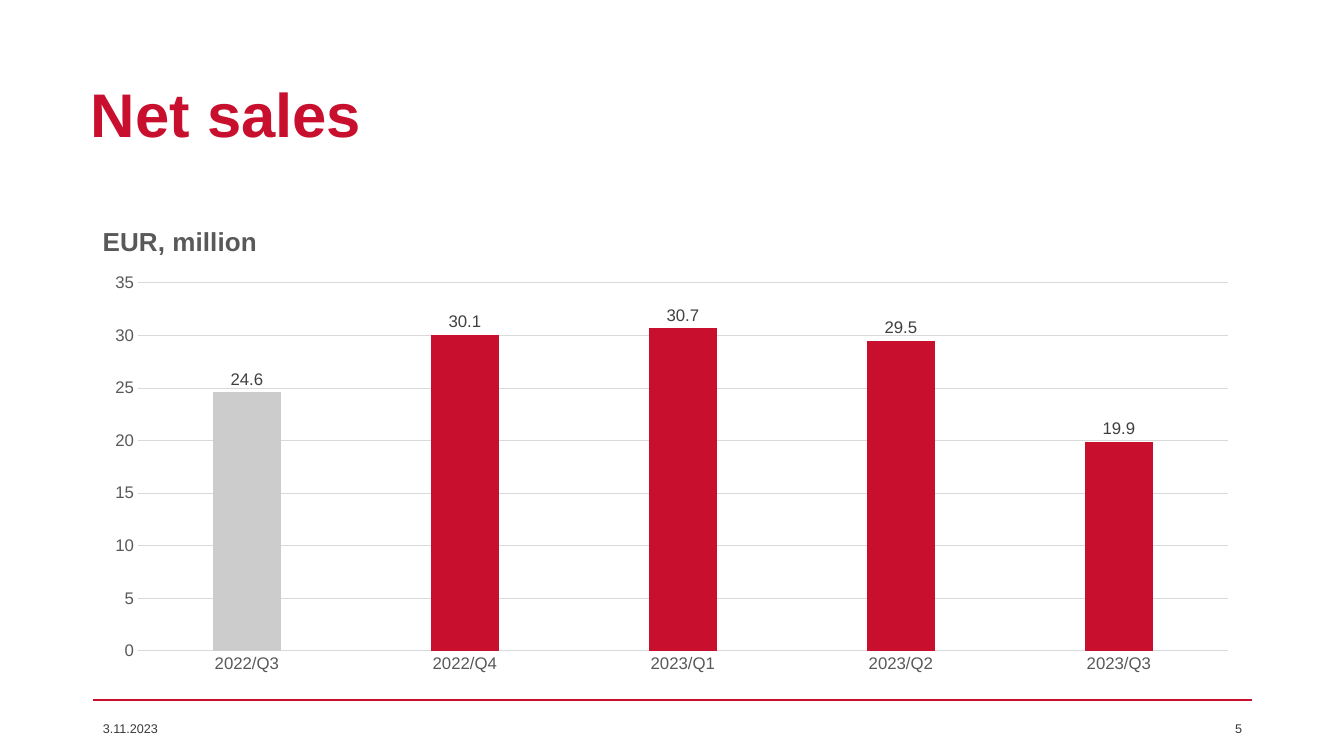
"""Build the net sales slide with its quarterly column chart."""
from lxml.etree import SubElement
from pptx import Presentation
from pptx.chart.data import CategoryChartData as Data
from pptx.dml.color import RGBColor as RGB
from pptx.enum.chart import XL_CHART_TYPE as Kind
from pptx.enum.chart import XL_LABEL_POSITION as Spot
from pptx.enum.chart import XL_TICK_MARK as Tick
from pptx.enum.shapes import MSO_CONNECTOR as Link
from pptx.enum.text import MSO_ANCHOR as Anchor
from pptx.enum.text import PP_ALIGN as Align
from pptx.oxml import parse_xml
from pptx.oxml.ns import nsdecls, qn
from pptx.util import Pt

COLORS = {"red": "C8102E", "gray": "CCCCCC", "grid": "D9D9D9",
          "axis": "595959", "label": "404040", "foot": "3B3838"}
FONT = "Arial"
SCALE = 914400 / 100.8
SIZE = (1344, 756)

TEXTS = [
    ("Net sales", (81, 40, 1159, 146), 44, "red", True, Align.LEFT),
    ("3.11.2023", (93, 701, 302, 55), 9, "foot", False, Align.LEFT),
    ("5", (950, 701, 302, 55), 9, "foot", False, Align.RIGHT),
]
RULE = (93, 700, 1252, 700)
FRAME = (93, 205, 1159, 478)
PLOT = (138, 283, 1090, 368)
HEAD = ("EUR, million", (98, 219))
SALES = {"2022/Q3": 24.6, "2022/Q4": 30.1, "2023/Q1": 30.7,
         "2023/Q2": 29.5, "2023/Q3": 19.9}


def px(*nums):
    return [round(n * SCALE) for n in nums]


def tint(name):
    return RGB.from_string(COLORS[name])


def style(font, size, color, bold=False):
    font.name, font.size, font.bold = FONT, Pt(size), bold
    font.color.rgb = tint(color)


def stroke(line, color, width):
    line.color.rgb = tint(color)
    line.width = Pt(width)


def add_text(slide, text, box, size, color, bold, align):
    frame = slide.shapes.add_textbox(*px(*box)).text_frame
    frame.word_wrap = True
    frame.vertical_anchor = Anchor.MIDDLE
    para = frame.paragraphs[0]
    para.alignment = align
    run = para.add_run()
    run.text = text
    style(run.font, size, color, bold)


def place(node, index, box, inner=False):
    for old in node.findall(qn("c:layout")):
        node.remove(old)
    left, top, wide, high = FRAME
    parts = [(box[0] - left) / wide, (box[1] - top) / high]
    parts += [n / full for n, full in zip(box[2:], (wide, high))]
    layout = parse_xml(f"<c:layout {nsdecls('c')}><c:manualLayout/></c:layout>")
    tags = [("layoutTarget", "inner")] if inner else []
    tags += [("xMode", "edge"), ("yMode", "edge")]
    tags += [(tag, f"{part:.4f}") for tag, part in zip("xywh", parts)]
    for tag, val in tags:
        SubElement(layout[0], qn(f"c:{tag}")).set("val", val)
    node.insert(index, layout)


def add_sales(slide):
    data = Data(number_format="0.0")
    data.categories = list(SALES)
    data.add_series("Series 1", list(SALES.values()))
    chart = slide.shapes.add_chart(Kind.COLUMN_CLUSTERED, *px(*FRAME), data).chart
    chart.has_legend = False
    style(chart.font, 12, "axis")

    run = chart.chart_title.text_frame.paragraphs[0].add_run()
    run.text = HEAD[0]
    style(run.font, 18.6, "axis", True)
    chart.chart_title.include_in_layout = False
    root = chart._chartSpace.chart
    place(root.find(qn("c:title")), 1, HEAD[1])
    place(root.plotArea, 0, PLOT, True)

    cat, val = chart.category_axis, chart.value_axis
    for axis in (cat, val):
        axis.major_tick_mark = axis.minor_tick_mark = Tick.NONE
        style(axis.tick_labels.font, 12, "axis")
    stroke(cat.format.line, "grid", 0.75)
    val.format.line.fill.background()
    val.minimum_scale, val.maximum_scale, val.major_unit = 0, 35, 5
    val.tick_labels.number_format = "0"
    val.tick_labels.number_format_is_linked = False
    stroke(val.major_gridlines.format.line, "grid", 0.75)

    plot = chart.plots[0]
    plot.gap_width, plot.overlap, plot.vary_by_categories = 219, -27, False
    bars = plot.series[0]
    for fmt, color in ((bars.format, "red"), (bars.points[0].format, "gray")):
        fmt.fill.solid()
        fmt.fill.fore_color.rgb = tint(color)
    labels = bars.data_labels
    labels.show_value = True
    labels.position = Spot.OUTSIDE_END
    labels.number_format = "0.0"
    labels.number_format_is_linked = False
    style(labels.font, 12, "label")


def main():
    deck = Presentation()
    deck.slide_width, deck.slide_height = px(*SIZE)
    slide = deck.slides.add_slide(deck.slide_layouts[6])
    rule = slide.shapes.add_connector(Link.STRAIGHT, *px(*RULE))
    stroke(rule.line, "red", 1.25)
    SubElement(rule._element.spPr, qn("a:effectLst"))
    for item in TEXTS:
        add_text(slide, *item)
    add_sales(slide)
    deck.save("out.pptx")


if __name__ == "__main__":
    main()
